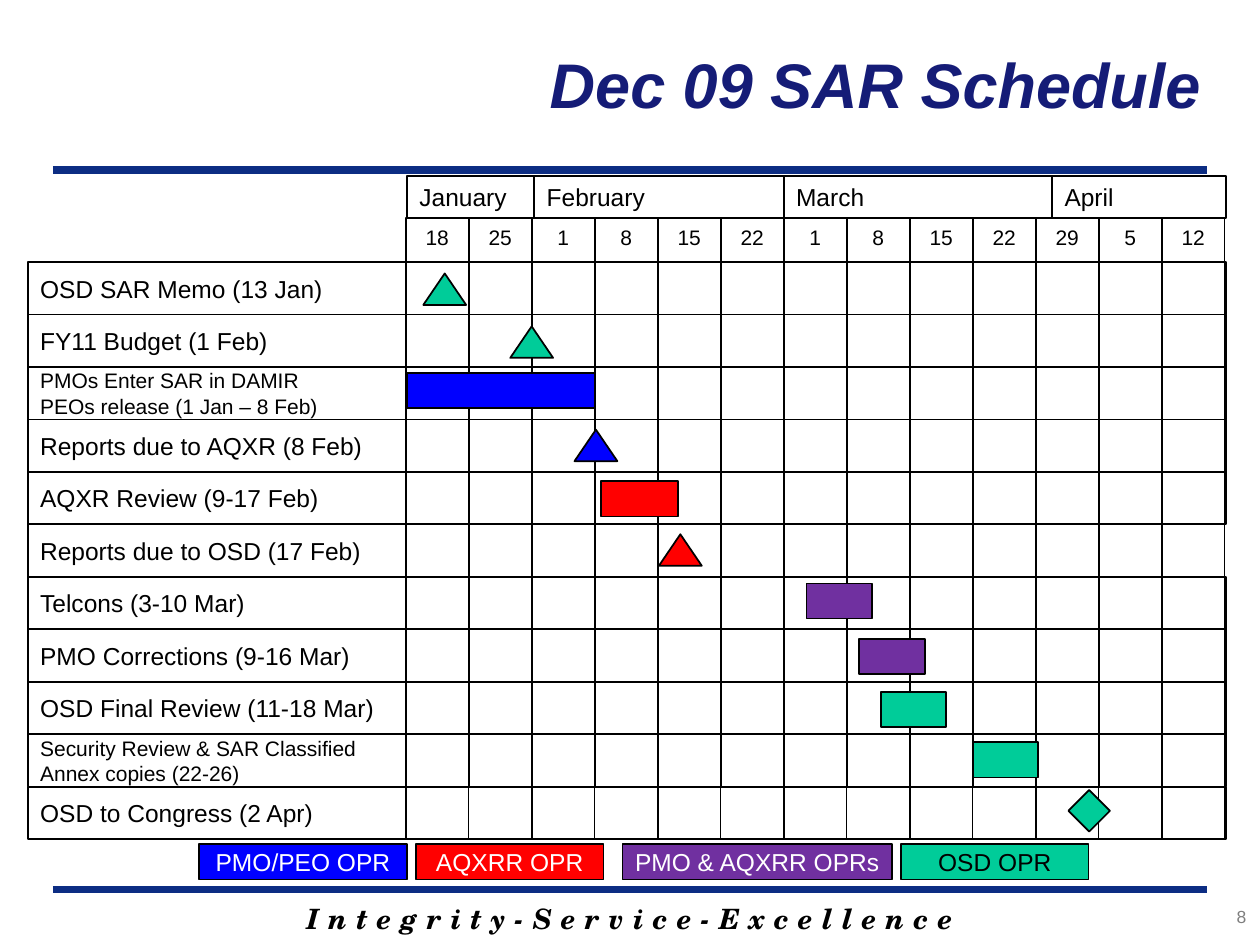
"""Build the Dec 09 SAR Schedule slide as a Gantt chart of native shapes."""
from lxml.etree import SubElement
from pptx import Presentation
from pptx.dml.color import RGBColor
from pptx.enum.shapes import MSO_CONNECTOR, MSO_SHAPE
from pptx.enum.text import MSO_ANCHOR, PP_ALIGN
from pptx.oxml.ns import qn
from pptx.util import Inches, Pt

BLACK, WHITE, NAVY, TITLE_BLUE, GRAY = "000000", "FFFFFF", "0C2D83", "151C77", "7F7F7F"
BLUE, RED, PURPLE, GREEN = "0000FF", "FF0000", "7030A0", "00CC99"
LEFT, CENTER, RIGHT = PP_ALIGN.LEFT, PP_ALIGN.CENTER, PP_ALIGN.RIGHT
TOP, MIDDLE = MSO_ANCHOR.TOP, MSO_ANCHOR.MIDDLE
RECTANGLE, TRIANGLE, DIAMOND = (
    MSO_SHAPE.RECTANGLE, MSO_SHAPE.ISOSCELES_TRIANGLE, MSO_SHAPE.DIAMOND)

MONTHS = [("January", 3.23), ("February", 4.24), ("March", 6.22), ("April", 8.35)]
WEEKS = [18, 25, 1, 8, 15, 22, 1, 8, 15, 22, 29, 5, 12]
TASKS = [
    ["OSD SAR Memo (13 Jan)"],
    ["FY11 Budget (1 Feb)"],
    ["PMOs Enter SAR in DAMIR", "PEOs release (1 Jan – 8 Feb)"],
    ["Reports due to AQXR (8 Feb)"],
    ["AQXR Review (9-17 Feb)"],
    ["Reports due to OSD (17 Feb)"],
    ["Telcons (3-10 Mar)"],
    ["PMO Corrections (9-16 Mar)"],
    ["OSD Final Review (11-18 Mar)"],
    ["Security Review & SAR Classified", "Annex copies (22-26)"],
    ["OSD to Congress (2 Apr)"],
]
SHORT_ROW = 5
MARKERS = [
    (TRIANGLE, 3.36, 2.17, 0.34, 0.25, GREEN),
    (TRIANGLE, 4.05, 2.59, 0.34, 0.25, GREEN),
    (RECTANGLE, 3.23, 2.96, 1.49, 0.28, BLUE),
    (TRIANGLE, 4.56, 3.41, 0.34, 0.25, BLUE),
    (RECTANGLE, 4.77, 3.82, 0.61, 0.28, RED),
    (TRIANGLE, 5.23, 4.24, 0.34, 0.25, RED),
    (RECTANGLE, 6.4, 4.63, 0.52, 0.28, PURPLE),
    (RECTANGLE, 6.82, 5.07, 0.52, 0.28, PURPLE),
    (RECTANGLE, 6.99, 5.49, 0.52, 0.28, GREEN),
    (RECTANGLE, 7.72, 5.89, 0.52, 0.28, GREEN),
    (DIAMOND, 8.48, 6.27, 0.33, 0.33, GREEN),
]
LEGEND = [
    ("PMO/PEO OPR", 1.58, 1.65, BLUE, WHITE),
    ("AQXRR OPR", 3.3, 1.49, RED, WHITE),
    ("PMO & AQXRR OPRs", 4.94, 2.14, PURPLE, WHITE),
    ("OSD OPR", 7.15, 1.49, GREEN, BLACK),
]
CHART_LEFT, CHART_RIGHT = 0.22, 9.73
MONTH_TOP, WEEK_TOP, ROWS_TOP, ROWS_BOTTOM = 1.4, 1.73, 2.08, 6.66
WEEK_LEFT, WEEK_WIDTH = 3.22, 0.5
ROW_HEIGHT = (ROWS_BOTTOM - ROWS_TOP) / len(TASKS)


def color(value):
    return RGBColor.from_string(value)


def write(box, lines, size=14, ink=BLACK, align=LEFT, anchor=MIDDLE, wrap=True,
          font="Arial", strong=False, spacing=0):
    frame = box.text_frame
    frame.word_wrap = wrap
    frame.vertical_anchor = anchor
    for index, line in enumerate(lines):
        para = frame.add_paragraph() if index else frame.paragraphs[0]
        para.alignment = align
        span = para.add_run()
        span.text = line
        span.font.name, span.font.size = font, Pt(size)
        span.font.bold = span.font.italic = strong
        span.font.color.rgb = color(ink)
        if spacing:
            span._r.get_or_add_rPr().set("spc", str(spacing))


def add_box(page, kind, left, top, width, height, fill=None):
    box = page.shapes.add_shape(kind, *map(Inches, (left, top, width, height)))
    box.shadow.inherit = False
    if fill:
        box.fill.solid()
        box.fill.fore_color.rgb = color(fill)
    else:
        box.fill.background()
    box.line.color.rgb = color(BLACK)
    box.line.width = Pt(1)
    return box


def add_text(page, left, top, width, height, text, **style):
    box = page.shapes.add_textbox(*map(Inches, (left, top, width, height)))
    write(box, [text], **style)


def add_rule(page, top):
    rule = page.shapes.add_connector(
        MSO_CONNECTOR.STRAIGHT, *map(Inches, (0.42, top, 9.58, top)))
    rule.line.color.rgb = color(NAVY)
    rule.line.width = Pt(4.5)
    SubElement(rule._element.spPr, qn("a:effectLst"))


def add_grid(page):
    for index, week in enumerate(WEEKS):
        bottom = ROWS_BOTTOM - (ROW_HEIGHT if index % 2 else 0)
        box = add_box(page, RECTANGLE, WEEK_LEFT + index * WEEK_WIDTH, WEEK_TOP,
                      WEEK_WIDTH, bottom - WEEK_TOP, WHITE)
        write(box, [str(week)], size=12, align=CENTER, anchor=TOP, wrap=False)
    edges = [left for _, left in MONTHS[1:]] + [CHART_RIGHT]
    for (month, left), right in zip(MONTHS, edges):
        box = add_box(page, RECTANGLE, left, MONTH_TOP, right - left,
                      WEEK_TOP - MONTH_TOP, WHITE)
        write(box, [month])
    for index, lines in enumerate(TASKS):
        right = 8.22 if index == SHORT_ROW else CHART_RIGHT
        box = add_box(page, RECTANGLE, CHART_LEFT, ROWS_TOP + index * ROW_HEIGHT,
                      right - CHART_LEFT, ROW_HEIGHT)
        write(box, lines, size=12 if len(lines) > 1 else 14)


def main():
    deck = Presentation()
    deck.slide_width, deck.slide_height = Inches(10), Inches(7.5)
    page = deck.slides.add_slide(deck.slide_layouts[6])
    add_text(page, 1.42, 7.1, 7.17, 0.37,
             "I n t e g r i t y - S e r v i c e - E x c e l l e n c e", size=16,
             align=CENTER, font="TeX Gyre Schola", strong=True, spacing=35)
    for top in (7.06, 1.35):
        add_rule(page, top)
    add_text(page, 8.74, 7.14, 1.25, 0.33, "8", size=10, ink=GRAY,
             align=RIGHT, anchor=TOP)
    add_text(page, 3.38, 0, 6.25, 1.33, "Dec 09 SAR Schedule", size=36,
             ink=TITLE_BLUE, align=RIGHT, strong=True)
    add_grid(page)
    for marker in MARKERS:
        add_box(page, *marker)
    for label, left, width, fill, ink in LEGEND:
        box = add_box(page, RECTANGLE, left, 6.7, width, 0.28, fill)
        write(box, [label], ink=ink, align=CENTER, wrap=False)
    deck.save("out.pptx")


if __name__ == "__main__":
    main()
